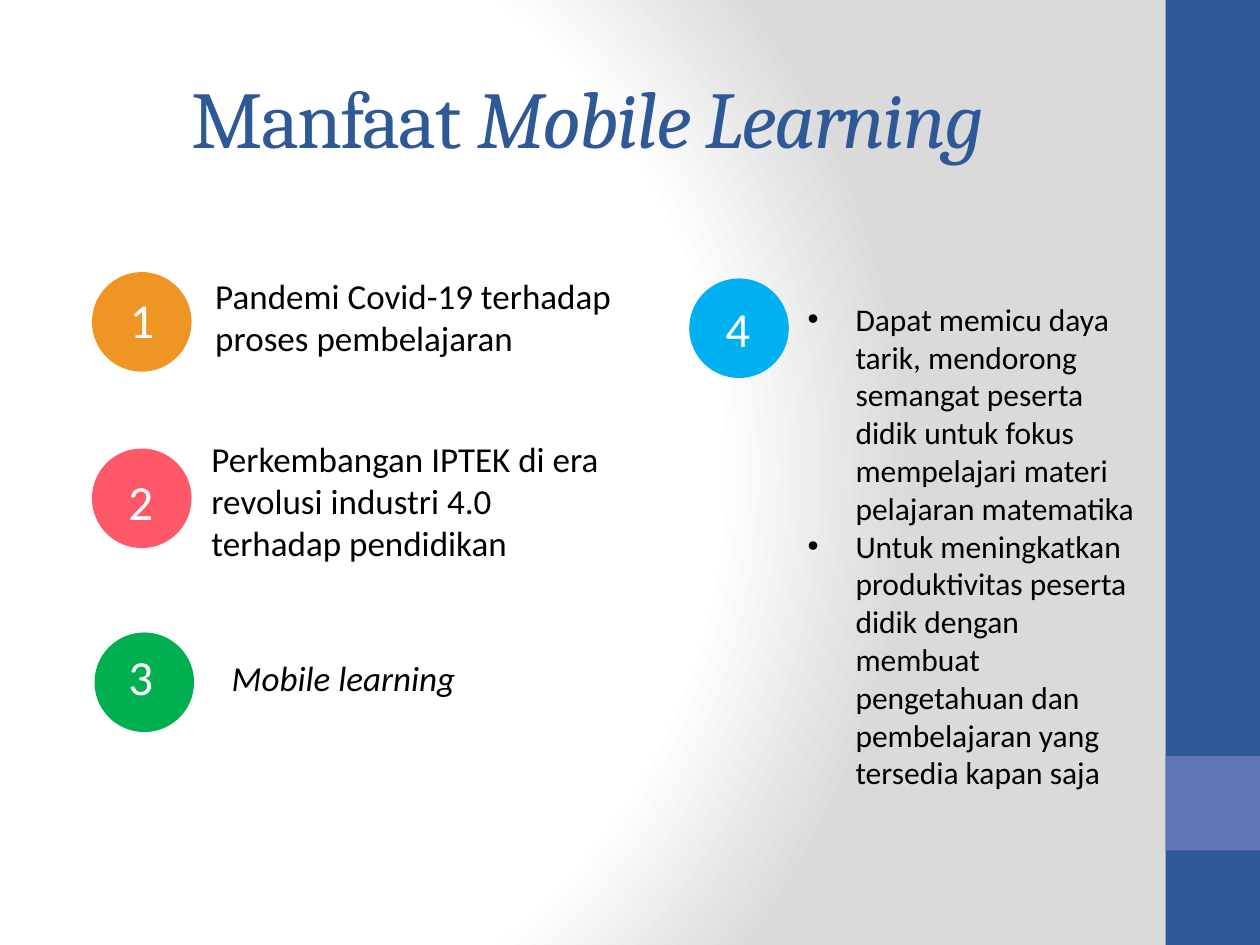
from dataclasses import dataclass
from typing import Any

from pptx import Presentation
from pptx import util as u
from pptx.dml.color import RGBColor
from pptx.enum import shapes, text
from pptx.oxml import parse_xml
from pptx.oxml.ns import nsdecls

COLUMNS, ROWS = 40, 30
WIDTH, HEIGHT = u.Inches(10), u.Inches(7.5)


@dataclass(frozen=True)
class Theme:
    heading_font: str = "Cambria"
    body_font: str = "Calibri"
    heading: str = "2F5897"
    accent: str = "6076B4"
    ink: str = "000000"
    paper: str = "FFFFFF"
    shade: str = "DADADA"
    orange: str = "EE9524"
    coral: str = "FF5969"
    green: str = "00B050"
    sky: str = "00B0F0"
    heading_size: int = 46
    number_size: int = 28
    benefit_size: int = 20
    detail_size: int = 18


@dataclass(frozen=True)
class Area:
    column: float
    row: float
    columns: float
    rows: float

    def box(self) -> tuple[int, int, int, int]:
        column_width, row_height = WIDTH / COLUMNS, HEIGHT / ROWS
        return (round(self.column * column_width), round(self.row * row_height),
                round(self.columns * column_width), round(self.rows * row_height))


@dataclass(frozen=True)
class Marker:
    number: str
    color: str
    column: float
    row: float
    number_column: float
    number_row: float


@dataclass(frozen=True)
class Benefit:
    wording: str
    area: Area
    italic: bool = False


THEME = Theme()
DISC = 3.16
MARKERS = [
    Marker("1", THEME.orange, 2.92, 8.64, 3.72, 9),
    Marker("2", THEME.coral, 2.92, 14.24, 3.68, 14.76),
    Marker("3", THEME.green, 3, 20.08, 3.68, 20.32),
    Marker("4", THEME.sky, 21.88, 8.84, 22.64, 9.28),
]
BENEFITS = [
    Benefit("Pandemi Covid-19 terhadap proses pembelajaran", Area(6.44, 8.52, 14.04, 3.08)),
    Benefit("Perkembangan IPTEK di era revolusi industri 4.0 terhadap pendidikan",
            Area(6.32, 13.68, 14.04, 4.44)),
    Benefit("Mobile learning", Area(6.96, 20.64, 14.04, 1.76), italic=True),
]
DETAILS = [
    "Dapat memicu daya tarik, mendorong semangat peserta didik untuk fokus "
    "mempelajari materi pelajaran matematika",
    "Untuk meningkatkan produktivitas peserta didik dengan membuat "
    "pengetahuan dan pembelajaran yang tersedia kapan saja",
]


def apply(target: Any, formats: dict[str, Any]) -> None:
    for attribute, value in formats.items():
        setattr(target, attribute, value)


def place(placeholder: Any, area: Area) -> None:
    apply(placeholder, dict(zip(("left", "top", "width", "height"), area.box())))


def write(paragraph: Any, wording: str, size: int, color: str,
          font: str = THEME.body_font, italic: bool = False) -> Any:
    run = paragraph.add_run()
    run.text = wording
    apply(run.font, {"name": font, "size": u.Pt(size), "italic": italic})
    run.font.color.rgb = RGBColor.from_string(color)
    return run


def paint_background(slide: Any) -> None:
    stops = "".join(
        f'<a:gs pos="{share * 1000}"><a:srgbClr val="{color}"/></a:gs>'
        for share, color in ((0, THEME.paper), (75, THEME.paper), (100, THEME.shade)))
    slide.element.cSld.insert(0, parse_xml(
        f'<p:bg {nsdecls("p", "a")}><p:bgPr><a:gradFill rotWithShape="1">'
        f'<a:gsLst>{stops}</a:gsLst><a:path path="circle">'
        '<a:fillToRect l="20000" t="50000" r="100000" b="50000"/></a:path>'
        '</a:gradFill><a:effectLst/></p:bgPr></p:bg>'))


def draw_shape(slide: Any, kind: Any, area: Area, color: str) -> None:
    shape = slide.shapes.add_shape(kind, *area.box())
    shape.shadow.inherit = False
    shape.fill.solid()
    shape.fill.fore_color.rgb = RGBColor.from_string(color)
    shape.line.fill.background()


def draw_text(slide: Any, area: Area, wording: str, size: int, color: str,
              wrap: bool = True, italic: bool = False) -> None:
    frame = slide.shapes.add_textbox(*area.box()).text_frame
    apply(frame, {"word_wrap": wrap, "auto_size": text.MSO_AUTO_SIZE.SHAPE_TO_FIT_TEXT})
    write(frame.paragraphs[0], wording, size, color, italic=italic)


def draw_marker(slide: Any, marker: Marker) -> None:
    draw_shape(slide, shapes.MSO_SHAPE.OVAL,
               Area(marker.column, marker.row, DISC, DISC), marker.color)
    draw_text(slide, Area(marker.number_column, marker.number_row, 1.6, 2.28),
              marker.number, THEME.number_size, THEME.paper, wrap=False)


def fill_title(title: Any) -> None:
    place(title, Area(2, 1.2, 33.32, 5))
    title.text_frame.vertical_anchor = text.MSO_ANCHOR.MIDDLE
    heading = title.text_frame.paragraphs[0]
    heading.alignment = text.PP_ALIGN.CENTER
    for wording, italic in (("Manfaat ", False), ("Mobile Learning", True)):
        run = write(heading, wording, THEME.heading_size, THEME.heading,
                    THEME.heading_font, italic)
        run.font._element.set("spc", "-100")


def fill_details(body: Any) -> None:
    place(body, Area(25.24, 9.32, 11.44, 16.16))
    frame = body.text_frame
    apply(frame, {"word_wrap": True, "vertical_anchor": text.MSO_ANCHOR.TOP,
                  "auto_size": text.MSO_AUTO_SIZE.SHAPE_TO_FIT_TEXT})
    indent = u.Inches(0.38)
    for index, wording in enumerate(DETAILS):
        detail = frame.add_paragraph() if index else frame.paragraphs[0]
        apply(detail, {"space_before": u.Pt(0), "line_spacing": 1.0,
                       "alignment": text.PP_ALIGN.LEFT})
        properties = detail._p.get_or_add_pPr()
        properties.set("marL", str(indent))
        properties.set("indent", str(-indent))
        for bullet in ('buFont {} typeface="Arial"', 'buChar {} char="•"'):
            properties.append(parse_xml(f"<a:{bullet.format(nsdecls('a'))}/>"))
        write(detail, wording, THEME.detail_size, THEME.ink)


def main() -> None:
    deck = Presentation()
    apply(deck, {"slide_width": WIDTH, "slide_height": HEIGHT})
    slide = deck.slides.add_slide(deck.slide_layouts[1])
    paint_background(slide)
    for area, color in ((Area(37, 0, 3, ROWS), THEME.heading),
                        (Area(37, 24, 3, 3), THEME.accent)):
        draw_shape(slide, shapes.MSO_SHAPE.RECTANGLE, area, color)
    fill_title(slide.shapes.title)
    for marker in MARKERS:
        draw_marker(slide, marker)
    for benefit in BENEFITS:
        draw_text(slide, benefit.area, benefit.wording, THEME.benefit_size,
                  THEME.ink, italic=benefit.italic)
    fill_details(slide.placeholders[1])
    deck.save("out.pptx")


if __name__ == "__main__":
    main()
